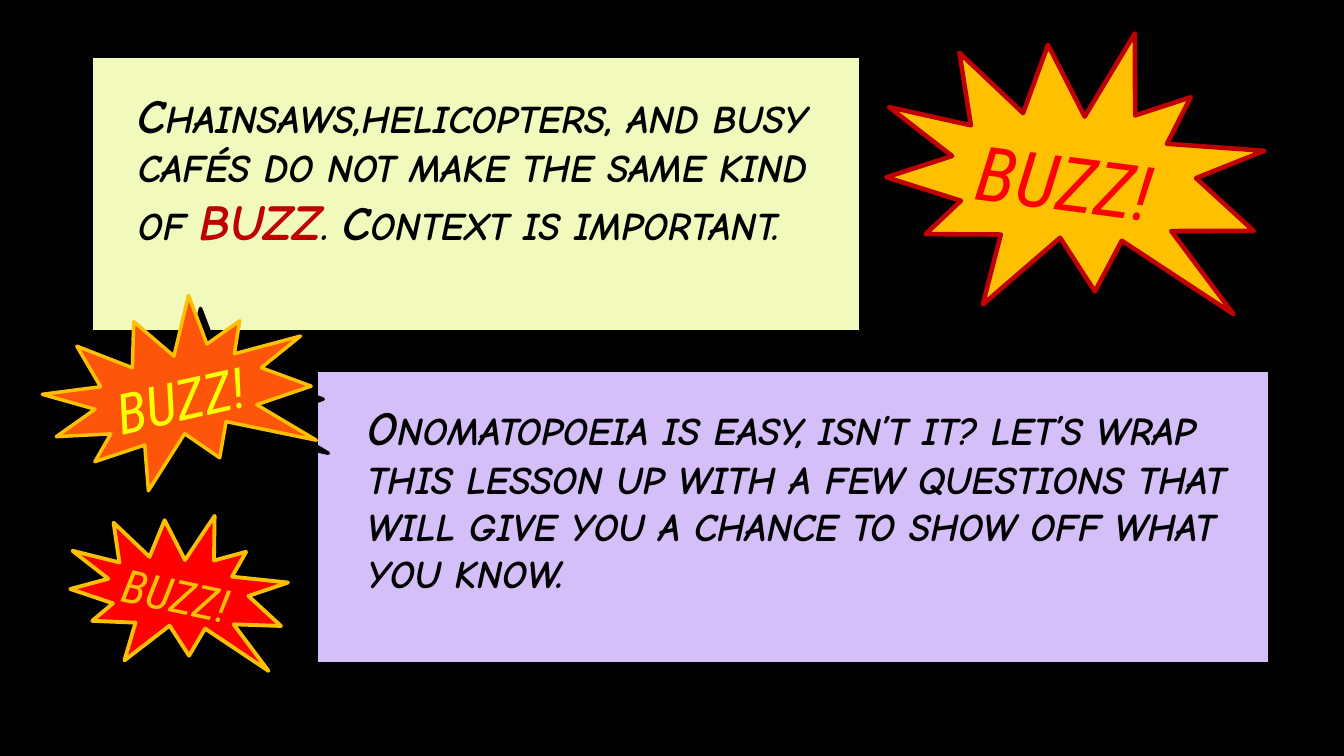
"""Build the closing onomatopoeia slide with two captions and three buzz bursts."""
from dataclasses import dataclass

import pptx
import pptx.dml.color
import pptx.enum.shapes
import pptx.enum.text
import pptx.util

EMU_PER_PX = 914400 / 100.8
CAPTION_FONT = "Comic Neue"
BURST_FONT = "Roboto Condensed"
BLACK = "000000"
RECT = pptx.enum.shapes.MSO_SHAPE.RECTANGLE
BURST = pptx.enum.shapes.MSO_SHAPE.EXPLOSION1
TOP = pptx.enum.text.MSO_ANCHOR.TOP
MIDDLE = pptx.enum.text.MSO_ANCHOR.MIDDLE


@dataclass(frozen=True)
class Box:
    """A frame in px with a rotation in degrees."""
    x: int
    y: int
    w: int
    h: int
    rot: float = 0


@dataclass(frozen=True)
class Run:
    """A piece of text with its size and colour."""
    text: str
    size: int
    color: str = BLACK


@dataclass(frozen=True)
class Caption:
    """A coloured panel with narration."""
    panel: Box
    text_box: Box
    fill: str
    runs: tuple[Run, ...]


@dataclass(frozen=True)
class Buzz:
    """A star burst with its shadow and sound word."""
    shadow: Box
    star: Box
    text_box: Box
    fill: str
    line: str
    line_pt: float
    word: Run


CAPTIONS = (
    Caption(Box(91, 56, 771, 276), Box(128, 76, 696, 234), "F1FABC", (
        Run("C", 34),
        Run("HAINSAWS,HELICOPTERS, AND BUSY CAFÉS DO NOT MAKE THE SAME KIND OF ", 28),
        Run("BUZZ", 36, "C00000"),
        Run(". ", 28),
        Run("C", 34),
        Run("ONTEXT IS IMPORTANT.", 28),
    )),
    Caption(Box(316, 370, 955, 295), Box(357, 388, 895, 258), "D4BFF9", (
        Run("O", 34),
        Run("NOMATOPOEIA IS EASY, ISN’T IT? LET’S WRAP THIS LESSON UP WITH A FEW "
            "QUESTIONS THAT WILL GIVE YOU A CHANCE TO SHOW OFF WHAT YOU KNOW.", 28),
    )),
)

BUZZES = (
    Buzz(Box(889, 52, 380, 292, 191.6), Box(881, 25, 380, 292, 189.3),
         Box(967, 132, 210, 99, 7.5), "FFC000", "C00000", 3.25,
         Run("BUZZ!", 54, "FF0000")),
    Buzz(Box(56, 312, 266, 185, 169.7), Box(44, 299, 266, 185, 169.7),
         Box(104, 351, 231, 78, 347.2), "FD560B", "FFC000", 2.5,
         Run("BUZZ!", 40, "FFFF00")),
    Buzz(Box(80, 518, 219, 159, 190.9), Box(67, 510, 219, 159, 190.9),
         Box(111, 572, 231, 67, 12), "FF0000", "FFC000", 2.75,
         Run("BUZZ!", 33, "FFC000")),
)


def px(n: float) -> int:
    """Turn px into EMU."""
    return round(n * EMU_PER_PX)


def rgb(color: str) -> pptx.dml.color.RGBColor:
    """Turn a hex string into a colour."""
    return pptx.dml.color.RGBColor.from_string(color)


def frame(box: Box) -> tuple[int, int, int, int]:
    """Give left, top, width and height in EMU."""
    return px(box.x), px(box.y), px(box.w), px(box.h)


def add_shape(s, kind, box: Box, *, fill: str, line: str, line_pt: float) -> None:
    """Draw a filled and outlined preset shape."""
    sp = s.shapes.add_shape(kind, *frame(box))
    sp.rotation = box.rot
    sp.shadow.inherit = False
    sp.fill.solid()
    sp.fill.fore_color.rgb = rgb(fill)
    sp.line.color.rgb = rgb(line)
    sp.line.width = pptx.util.Pt(line_pt)


def add_text(s, box: Box, runs: tuple[Run, ...], *, font: str, bold: bool = False,
             anchor=TOP, inset_y: int = 5) -> None:
    """Write italic runs in one wrapped paragraph."""
    sp = s.shapes.add_textbox(*frame(box))
    sp.rotation = box.rot
    tf = sp.text_frame
    tf.word_wrap = True
    tf.vertical_anchor = anchor
    tf.margin_left = tf.margin_right = px(10)
    tf.margin_top = tf.margin_bottom = px(inset_y)
    p = tf.paragraphs[0]
    for run in runs:
        r = p.add_run()
        r.text = run.text
        r.font.name = font
        r.font.size = pptx.util.Pt(run.size)
        r.font.bold = bold
        r.font.italic = True
        r.font.color.rgb = rgb(run.color)


def add_caption(s, caption: Caption) -> None:
    """Draw a panel and its narration."""
    add_shape(s, RECT, caption.panel, fill=caption.fill, line=BLACK, line_pt=3.5)
    add_text(s, caption.text_box, caption.runs, font=CAPTION_FONT, bold=True, inset_y=10)


def add_buzz(s, buzz: Buzz) -> None:
    """Draw a burst over its shadow, then its word."""
    add_shape(s, BURST, buzz.shadow, fill=BLACK, line=BLACK, line_pt=buzz.line_pt)
    add_shape(s, BURST, buzz.star, fill=buzz.fill, line=buzz.line, line_pt=buzz.line_pt)
    add_text(s, buzz.text_box, (buzz.word,), font=BURST_FONT, anchor=MIDDLE)


def main() -> None:
    """Build and save the slide."""
    prs = pptx.Presentation()
    prs.slide_width, prs.slide_height = px(1344), px(756)
    s = prs.slides.add_slide(prs.slide_layouts[6])
    s.background.fill.solid()
    s.background.fill.fore_color.rgb = rgb(BLACK)
    for caption in CAPTIONS:
        add_caption(s, caption)
    for buzz in BUZZES:
        add_buzz(s, buzz)
    prs.save("out.pptx")


if __name__ == "__main__":
    main()
